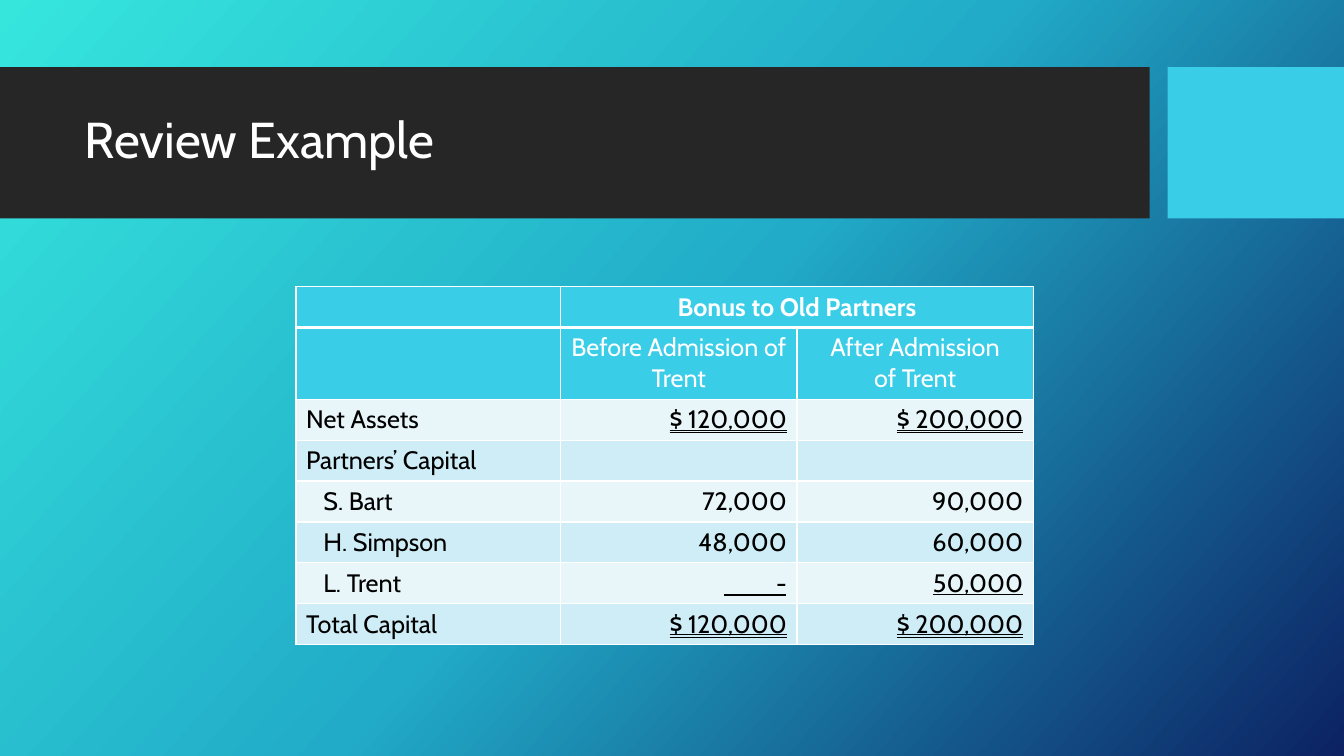
"""Build the partnership bonus review slide."""
from copy import deepcopy

from lxml import etree
from pptx import Presentation
from pptx import util as u
from pptx.dml.color import RGBColor
from pptx.enum import shapes, text
from pptx.oxml.ns import qn

COLORS = {
    "bar": "262626", "accent": "39CDE7", "white": "FFFFFF", "black": "000000",
    "light": "E8F6FA", "band": "CEEDF6",
}
BACKDROP = [(0, "36E6DD"), (0.5, "21ABC8"), (1, "0C2263")]
FONT = "Cabin"
COLUMNS = [252, 225, 225]
ROW, TALL_ROW = 39, 68
INDENT = 26
ROWS = [
    ("", "Bonus to Old Partners", ""),
    ("", "Before Admission of Trent", "After Admission\vof Trent"),
    ("Net Assets", "$ 120,000", "$ 200,000"),
    ("Partners’ Capital", "", ""),
    ("S. Bart", "72,000", "90,000"),
    ("H. Simpson", "48,000", "60,000"),
    ("L. Trent", "-", "50,000"),
    ("Total Capital", "$ 120,000", "$ 200,000"),
]
PARTNER_ROWS = (4, 5, 6)


def px(n):
    return u.Emu(n * 9525)


def rgb(name):
    return RGBColor.from_string(COLORS[name])


class Deck:
    def __init__(self):
        self.prs = Presentation()
        self.prs.slide_width, self.prs.slide_height = px(1280), px(720)
        self.s = self.prs.slides.add_slide(self.prs.slide_layouts[5])

    def background(self, stops, angle):
        fill = self.s.background.fill
        fill.gradient()
        fill.gradient_angle = 360 - angle
        gs = self.s.element.find(".//" + qn("a:gsLst"))
        gs.append(deepcopy(gs[-1]))
        for stop, (position, color) in zip(fill.gradient_stops, stops):
            stop.position = position
            stop.color.rgb = RGBColor.from_string(color)

    def bar(self, x, y, w, h, color):
        sp = self.s.shapes.add_shape(
            shapes.MSO_SHAPE.RECTANGLE, px(x), px(y), px(w), px(h))
        sp.shadow.inherit = False
        sp.fill.solid()
        sp.fill.fore_color.rgb = rgb(color)
        sp.line.fill.background()

    def style(self, p, size, color, align, bold=False):
        p.alignment = align
        p.font.name, p.font.size, p.font.bold = FONT, u.Pt(size), bold
        p.font.color.rgb = rgb(color)

    def title(self, words, x, y, w, h):
        sp = self.s.shapes.title
        sp.left, sp.top, sp.width, sp.height = px(x), px(y), px(w), px(h)
        self.s.shapes._spTree.append(sp._element)
        tf = sp.text_frame
        tf.text = words
        tf.auto_size = text.MSO_AUTO_SIZE.NONE
        tf.vertical_anchor = text.MSO_ANCHOR.MIDDLE
        p = tf.paragraphs[0]
        p.line_spacing = 0.9
        self.style(p, 36, "white", text.PP_ALIGN.LEFT)

    def borders(self, cell, row):
        thick = {0: "B", 1: "T"}.get(row)
        tc_pr = cell._tc.get_or_add_tcPr()
        for side in "LRTB":
            width = u.Pt(3 if side == thick else 1)
            ln = etree.SubElement(tc_pr, qn(f"a:ln{side}"), w=str(width))
            fill = etree.SubElement(ln, qn("a:solidFill"))
            etree.SubElement(fill, qn("a:srgbClr"), val=COLORS["white"])

    def cell(self, cell, row, col, words):
        header = row < 2
        self.borders(cell, row)
        cell.fill.solid()
        cell.fill.fore_color.rgb = rgb(
            "accent" if header else "band" if row % 2 else "light")
        if col == 0 and row in PARTNER_ROWS:
            cell.margin_left = px(INDENT)
        cell.text = words
        p = cell.text_frame.paragraphs[0]
        align = (text.PP_ALIGN.CENTER if header else
                 text.PP_ALIGN.RIGHT if col else text.PP_ALIGN.LEFT)
        self.style(p, 18, "white" if header else "black", align, row == 0)
        if words.startswith("$"):
            p.font.underline = text.MSO_UNDERLINE.DOUBLE_LINE
        elif words == "50,000":
            p.font.underline = True

    def table(self, x, y, columns, rows):
        heights = [TALL_ROW if i == 1 else ROW for i in range(len(rows))]
        table = self.s.shapes.add_table(
            len(rows), len(columns), px(x), px(y),
            px(sum(columns)), px(sum(heights))).table
        table.first_row = table.horz_banding = False
        for column, width in zip(table.columns, columns):
            column.width = px(width)
        for i, words in enumerate(rows):
            table.rows[i].height = px(heights[i])
            for j, word in enumerate(words):
                self.cell(table.cell(i, j), i, j, word)
        table.cell(0, 1).merge(table.cell(0, 2))

    def rule(self, x1, x2, y):
        line = self.s.shapes.add_connector(
            shapes.MSO_CONNECTOR.STRAIGHT, px(x1), px(y), px(x2), px(y))
        line.line.color.rgb = rgb("black")
        line.line.width = u.Pt(1.25)
        etree.SubElement(line._element.spPr, qn("a:effectLst"))


def main():
    deck = Deck()
    deck.background(BACKDROP, 42)
    deck.bar(0, 64, 1095, 144, "bar")
    deck.bar(1112, 64, 168, 144, "accent")
    deck.title("Review Example", 71, 79, 1009, 113)
    deck.table(282, 273, COLUMNS, ROWS)
    deck.rule(690, 749, 567)
    deck.prs.save("out.pptx")


if __name__ == "__main__":
    main()
